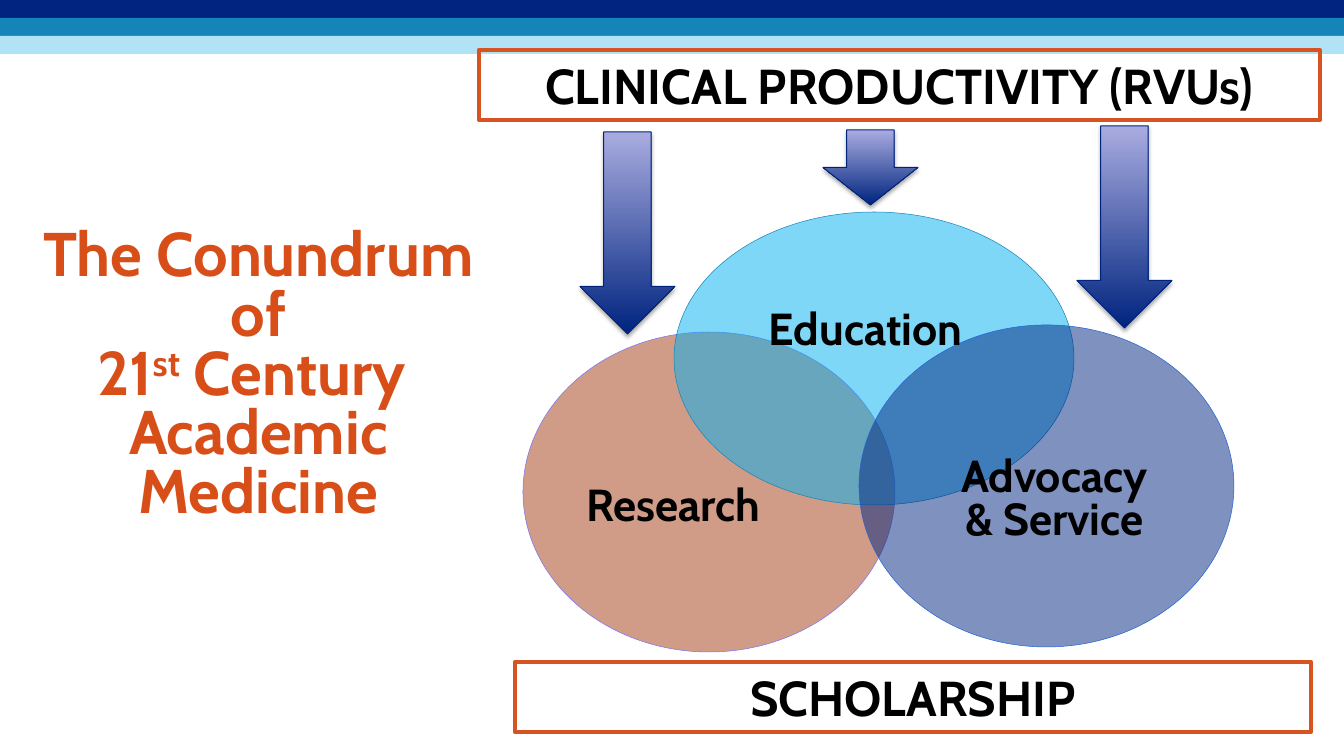
from lxml.etree import SubElement
from pptx import Presentation
from pptx.dml.color import RGBColor
from pptx.enum.shapes import MSO_SHAPE
from pptx.enum.text import MSO_ANCHOR, MSO_AUTO_SIZE, PP_ALIGN
from pptx.oxml.ns import qn
from pptx.util import Emu, Pt

EMU_PER_PX = 914400 / 100.8
SLIDE_WIDTH, SLIDE_HEIGHT = 1344, 756
FONT = "Cabin"

NAVY = RGBColor(0x00, 0x24, 0x7F)
NAVY_LINE = RGBColor(0x00, 0x23, 0x7C)
TEAL = RGBColor(0x15, 0x85, 0xB9)
PALE_BLUE = RGBColor(0xAF, 0xE3, 0xF5)
LAVENDER = RGBColor(0xA9, 0xAC, 0xE0)
VIOLET = RGBColor(0x79, 0x73, 0xF5)
ROYAL = RGBColor(0x23, 0x64, 0xD8)
SKY = RGBColor(0x00, 0xB0, 0xF0)
RUST = RGBColor(0xA2, 0x3A, 0x13)
ORANGE = RGBColor(0xD8, 0x4E, 0x19)
FRAME_ORANGE = RGBColor(0xD7, 0x53, 0x21)
BLACK = RGBColor(0x00, 0x00, 0x00)


def px(length):
    return Emu(round(length * EMU_PER_PX))


def emu_box(box):
    return [px(length) for length in box]


def write(frame, *runs, size, color=BLACK, spacing=None, anchor=MSO_ANCHOR.MIDDLE):
    """Write one centred paragraph; a run is a text or a (text, baseline) pair."""
    frame.word_wrap = True
    frame.auto_size = MSO_AUTO_SIZE.NONE
    frame.vertical_anchor = anchor
    paragraph = frame.paragraphs[0]
    paragraph.alignment = PP_ALIGN.CENTER
    if spacing:
        paragraph.line_spacing = spacing
    for item in runs:
        text, baseline = item if isinstance(item, tuple) else (item, 0)
        for index, line in enumerate(text.split("\n")):
            if index:
                paragraph.add_line_break()
            run = paragraph.add_run()
            run.text = line
            run.font.name = FONT
            run.font.size = Pt(size)
            run.font.bold = True
            run.font.color.rgb = color
            if baseline:
                run.font._element.set("baseline", str(baseline * 1000))


def add_preset(slide, kind, box, fill=None, line=None, line_width=0.37):
    shape = slide.shapes.add_shape(kind, *emu_box(box))
    shape.shadow.inherit = False
    if fill is None:
        shape.fill.background()
    else:
        shape.fill.solid()
        shape.fill.fore_color.rgb = fill
    if line is None:
        shape.line.fill.background()
    else:
        shape.line.color.rgb = line
        shape.line.width = Pt(line_width)
    return shape


def add_header_bands(slide, box):
    left, top, width, height = box
    colors = (NAVY, TEAL, PALE_BLUE)
    band_height = height // len(colors)
    for index, color in enumerate(colors):
        band_box = (left, top + index * band_height, width, band_height)
        add_preset(slide, MSO_SHAPE.RECTANGLE, band_box, fill=color)


def add_title(slide, box):
    title = slide.shapes.title
    title.left, title.top, title.width, title.height = emu_box(box)
    write(title.text_frame, "The Conundrum of\n21", ("st", 30),
          " Century \nAcademic Medicine", size=44, color=ORANGE, spacing=0.8)


def add_banner(slide, box, text):
    banner = add_preset(slide, MSO_SHAPE.RECTANGLE, box,
                        line=FRAME_ORANGE, line_width=3)
    write(banner.text_frame, text, size=35)


def add_missions(slide, box):
    """Three overlapping half-transparent ellipses with their labels on top."""
    left, top = box[:2]
    circles = (
        ((0, 120, 372, 320), RUST, VIOLET),
        ((151, 0, 400, 293), SKY, TEAL),
        ((336, 113, 375, 322), NAVY, ROYAL),
    )
    labels = (
        ((211, 84, 263, 75), "Education", None),
        ((32, 260, 237, 69), "Research", None),
        ((413, 241, 237, 112), "Advocacy & Service", 0.8),
    )
    for (x, y, width, height), fill, line in circles:
        circle = add_preset(slide, MSO_SHAPE.OVAL,
                            (left + x, top + y, width, height), fill, line)
        color = circle._element.spPr.find(qn("a:solidFill"))[0]
        SubElement(color, qn("a:alpha"), val="50000")
    for (x, y, width, height), text, spacing in labels:
        label = slide.shapes.add_textbox(
            *emu_box((left + x, top + y, width, height)))
        write(label.text_frame, text, size=32, spacing=spacing,
              anchor=MSO_ANCHOR.TOP)


def add_soft_shadow(shape):
    effects = shape._element.spPr.find(qn("a:effectLst"))
    shadow = SubElement(effects, qn("a:outerShdw"), blurRad=str(Pt(3.1)),
                        dist=str(Pt(1.8)), dir="5400000", rotWithShape="0")
    color = SubElement(shadow, qn("a:srgbClr"), val=str(BLACK))
    SubElement(color, qn("a:alpha"), val="35000")


def add_pressure_arrows(slide, box):
    """Arrows pressing down from the clinical banner, each (x, y, height)."""
    left, top = box[:2]
    for x, y, height in ((243, 4, 75), (0, 6, 202), (497, 0, 202)):
        arrow = add_preset(slide, MSO_SHAPE.DOWN_ARROW,
                           (left + x, top + y, 95, height),
                           line=NAVY_LINE, line_width=0.75)
        arrow.fill.gradient()
        arrow.fill.gradient_angle = 90
        for stop, color in zip(arrow.fill.gradient_stops, (NAVY, LAVENDER)):
            stop.color.rgb = color
        add_soft_shadow(arrow)


def main():
    deck = Presentation()
    deck.slide_width, deck.slide_height = px(SLIDE_WIDTH), px(SLIDE_HEIGHT)
    slide = deck.slides.add_slide(deck.slide_layouts.get_by_name("Title Only"))
    add_header_bands(slide, (0, 0, SLIDE_WIDTH, 54))
    add_title(slide, (2, 229, 513, 297))
    add_missions(slide, (523, 212, 711, 440))
    add_banner(slide, (515, 662, 796, 70), "SCHOLARSHIP")
    add_banner(slide, (479, 50, 841, 70), "CLINICAL PRODUCTIVITY (RVUs)")
    add_pressure_arrows(slide, (580, 126, 592, 208))
    deck.save("out.pptx")


if __name__ == "__main__":
    main()
